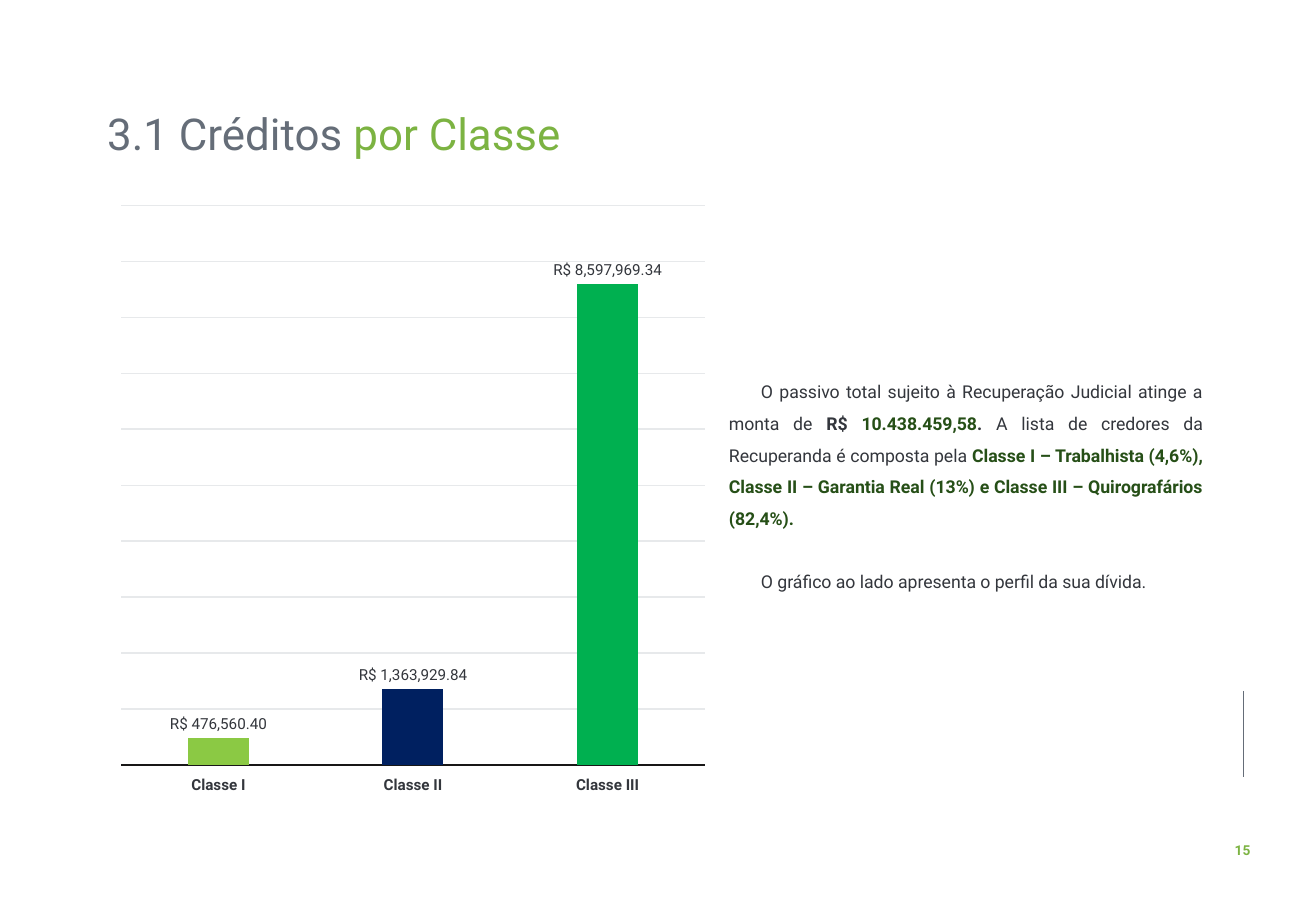
from pptx import Presentation
from pptx.chart.data import CategoryChartData
from pptx.dml.color import RGBColor
from pptx.enum.chart import XL_CHART_TYPE, XL_LABEL_POSITION, XL_TICK_LABEL_POSITION, XL_TICK_MARK
from pptx.enum.shapes import MSO_CONNECTOR
from pptx.enum.text import MSO_ANCHOR, MSO_AUTO_SIZE, PP_ALIGN
from pptx.util import Pt
from lxml.etree import SubElement
from pptx.oxml.ns import qn

SCALE = 914400 / 121.5
GRAY, GREEN, INK, FOREST = "656D78", "7CB342", "33363C", "264F17"
CURRENCY = '"R$"\\ #,##0.00'


def px(n):
    return round(n * SCALE)


def rgb(color):
    return RGBColor.from_string(color)


class Deck:
    """Builds slide elements in one shared style."""

    def __init__(self, width, height, font):
        self.prs = Presentation()
        self.prs.slide_width, self.prs.slide_height = px(width), px(height)
        self.font = font
        self.s = self.prs.slides.add_slide(self.prs.slide_layouts[5])

    def style(self, font, size, color=None, bold=False):
        font.name, font.size, font.bold = self.font, Pt(size), bold
        if color:
            font.color.rgb = rgb(color)

    def runs(self, p, parts):
        for text, color, bold in parts:
            r = p.add_run()
            r.text = text
            r.font.color.rgb = rgb(color)
            r.font.bold = bold

    def title(self, box, parts, size):
        sp = self.s.shapes.title
        sp.left, sp.top, sp.width, sp.height = map(px, box)
        tf = sp.text_frame
        tf.auto_size = MSO_AUTO_SIZE.NONE
        tf.vertical_anchor = MSO_ANCHOR.MIDDLE
        p = tf.paragraphs[0]
        p.alignment, p.line_spacing = PP_ALIGN.LEFT, 0.9
        self.style(p.font, size)
        self.runs(p, parts)

    def text(self, box, paragraphs, size, align, wrap=True, spacing=1.0, indent=0, gap=0):
        tf = self.s.shapes.add_textbox(*map(px, box)).text_frame
        tf.word_wrap = wrap
        for i, parts in enumerate(paragraphs):
            p = tf.add_paragraph() if i else tf.paragraphs[0]
            p.alignment, p.line_spacing = align, spacing
            if i:
                p.space_before = Pt(gap)
            if indent:
                p._p.get_or_add_pPr().set("indent", str(px(indent)))
            self.style(p.font, size)
            self.runs(p, parts)

    def line(self, x1, y1, x2, y2, color, width):
        sp = self.s.shapes.add_connector(MSO_CONNECTOR.STRAIGHT, *map(px, (x1, y1, x2, y2)))
        sp.line.color.rgb = rgb(color)
        sp.line.width = Pt(width)
        SubElement(sp._element.spPr, qn("a:effectLst"))

    def columns(self, box, name, data, top, step):
        chart_data = CategoryChartData(number_format=CURRENCY)
        chart_data.categories = [label for label, _, _ in data]
        chart_data.add_series(name, [value for _, value, _ in data])
        chart = self.s.shapes.add_chart(
            XL_CHART_TYPE.COLUMN_CLUSTERED, *map(px, box), chart_data).chart
        chart.has_legend = chart.has_title = False
        self.style(chart.font, 10, INK)

        axis = chart.category_axis
        axis.major_tick_mark = axis.minor_tick_mark = XL_TICK_MARK.NONE
        axis.tick_label_position = XL_TICK_LABEL_POSITION.LOW
        self.style(axis.tick_labels.font, 9, INK, True)
        axis.format.line.color.rgb = rgb("181717")
        axis.format.line.width = Pt(0.75)

        values = chart.value_axis
        values.visible = False
        values.minimum_scale, values.maximum_scale, values.major_unit = 0, top, step
        values.has_major_gridlines = True
        grid = values.major_gridlines.format.line
        grid.color.rgb, grid.width = rgb("E7E9EB"), Pt(0.75)

        plot = chart.plots[0]
        plot.gap_width, plot.overlap, plot.vary_by_categories = 219, -27, False
        series = plot.series[0]
        for i, (_, _, color) in enumerate(data):
            fill = series.points[i].format.fill
            fill.solid()
            fill.fore_color.rgb = rgb(color)
        labels = series.data_labels
        labels.show_value = True
        labels.position = XL_LABEL_POSITION.OUTSIDE_END
        labels.number_format, labels.number_format_is_linked = CURRENCY, False
        self.style(labels.font, 9, INK)


def main():
    deck = Deck(1316, 911, "Roboto")
    deck.line(1243, 691, 1243, 777, GRAY, 0.5)
    deck.text((1222, 836, 41, 29), [[("15", GREEN, True)]], 8.1, PP_ALIGN.CENTER, wrap=False)
    deck.title((95, 104, 994, 64),
               [("3.1 Créditos ", GRAY, False), ("por Classe", GREEN, False)], 26)
    deck.text((717, 364, 498, 202), [
        [("O passivo total sujeito à Recuperação Judicial atinge a monta de ", INK, False),
         ("R$ ", INK, True),
         ("10.438.459,58", FOREST, True),
         (". ", INK, True),
         ("A lista de credores da Recuperanda é composta pela ", INK, False),
         ("Classe I – Trabalhista (4,6%), Classe II – Garantia Real (13%) "
          "e Classe III – Quirografários (82,4%).", FOREST, True)],
        [("O gráfico ao lado apresenta o perfil da sua dívida.", INK, False)],
    ], 10.5, PP_ALIGN.JUSTIFY, spacing=1.5, indent=32, gap=18.5)
    deck.columns((109, 193, 608, 614), "Series 1", [
        ("Classe I", 476560.40, "8BC944"),
        ("Classe II", 1363929.84, "002060"),
        ("Classe III", 8597969.34, "00B050"),
    ], 10000000, 1000000)
    deck.prs.save("out.pptx")


if __name__ == "__main__":
    main()
